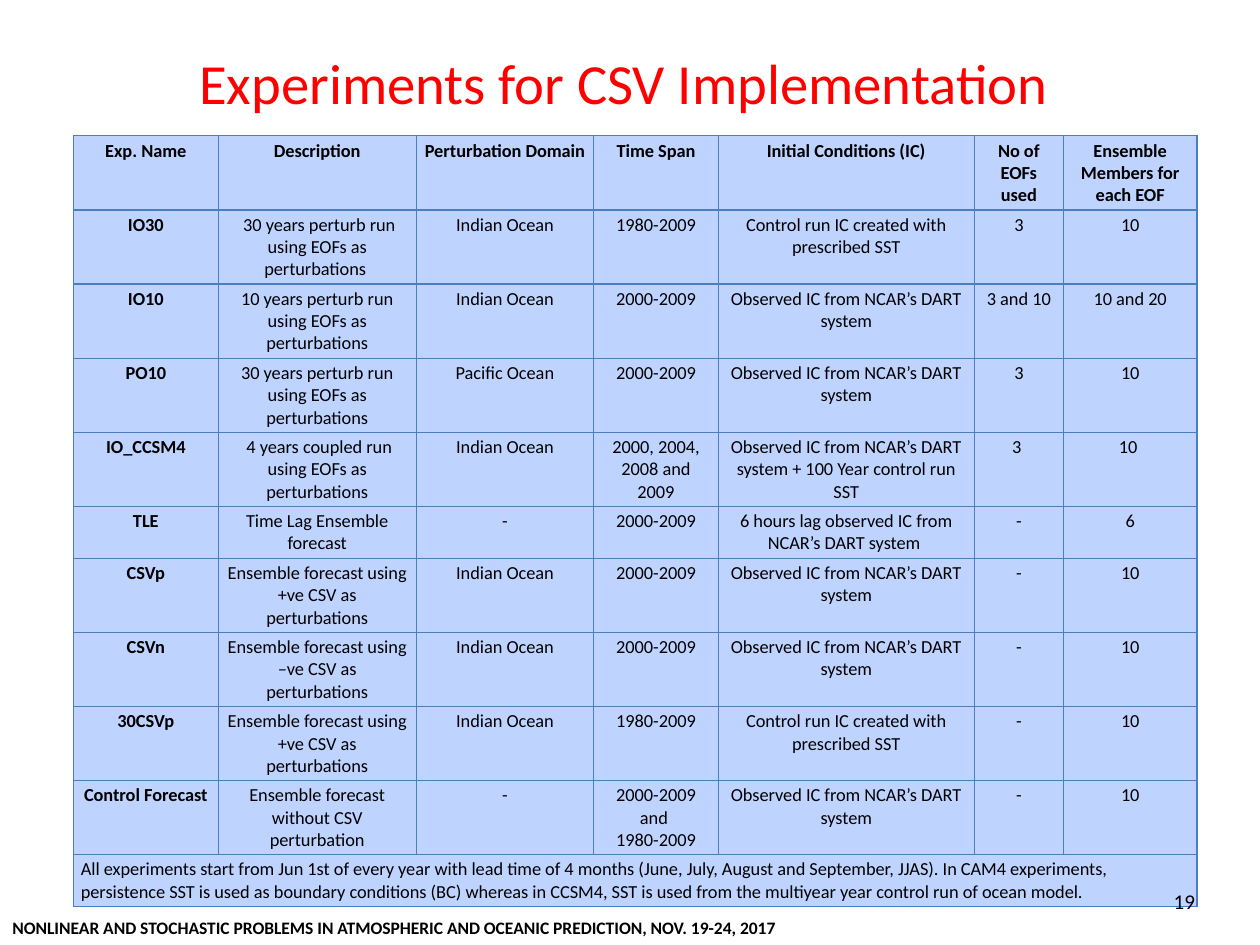
"""Build the slide that lists the experiments for CSV implementation."""
import lxml.etree
import pptx
import pptx.dml.color
import pptx.enum.text
import pptx.oxml.ns
import pptx.util

Cm = pptx.util.Cm
Pt = pptx.util.Pt
RGBColor = pptx.dml.color.RGBColor
ALIGN = pptx.enum.text.PP_ALIGN
ANCHOR = pptx.enum.text.MSO_ANCHOR
qn = pptx.oxml.ns.qn

BLACK = RGBColor(0x00, 0x00, 0x00)
RED = RGBColor(0xFF, 0x00, 0x00)
CELL_BLUE = RGBColor(0xBF, 0xD3, 0xFF)
BORDER_BLUE = RGBColor(0x4B, 0x7E, 0xBC)

COLUMN_WIDTHS = [2.92, 3.99, 3.58, 2.51, 5.16, 1.8, 2.69]
THREE_LINES, TWO_LINES = 1.49, 1.04
ROW_HEIGHTS = [THREE_LINES] * 5 + [TWO_LINES] + [THREE_LINES] * 4 + [TWO_LINES]

OBSERVED = "Observed IC from NCAR’s DART system"
CONTROL = "Control run IC created with prescribed SST"
HEADER = ["Exp. Name", "Description", "Perturbation Domain", "Time Span",
          "Initial Conditions (IC)", "No of EOFs used", "Ensemble Members for each EOF"]
EXPERIMENTS = [
    ["IO30", " 30 years perturb run using EOFs as perturbations ", "Indian Ocean",
     "1980-2009", CONTROL, "3", "10"],
    ["IO10", "10 years perturb run using EOFs as perturbations", "Indian Ocean",
     "2000-2009", OBSERVED, "3 and 10", "10 and 20"],
    ["PO10", "30 years perturb run using EOFs as perturbations", "Pacific Ocean",
     "2000-2009", OBSERVED, "3", "10"],
    ["IO_CCSM4", " 4 years coupled run using EOFs as perturbations", "Indian Ocean",
     "2000, 2004, 2008 and\n2009", OBSERVED + " + 100 Year control run SST", "3 ", "10 "],
    ["TLE", "Time Lag Ensemble forecast", "-",
     "2000-2009", "6 hours lag observed IC from NCAR’s DART system ", "-", "6"],
    ["CSVp", "Ensemble forecast using +ve CSV as perturbations", "Indian Ocean",
     "2000-2009", OBSERVED, "-", "10"],
    ["CSVn", "Ensemble forecast using –ve CSV as perturbations", "Indian Ocean",
     "2000-2009", OBSERVED, "-", "10"],
    ["30CSVp", "Ensemble forecast using +ve CSV as perturbations", "Indian Ocean",
     "1980-2009", CONTROL, "-", "10"],
    ["Control Forecast", "Ensemble forecast without CSV perturbation", "-",
     "2000-2009 and \n1980-2009", OBSERVED, "-", "10"],
]
NOTE = ("All experiments start from Jun 1st of every year with lead time of 4 months "
        "(June, July, August and September, JJAS). In CAM4 experiments, persistence SST "
        "is used as boundary conditions (BC) whereas in CCSM4, SST is used from the "
        "multiyear year control run of ocean model.")


def write(text_frame, text, size, color, alignment, bold=False):
    text_frame.text = text
    text_frame.word_wrap = True
    for paragraph in text_frame.paragraphs:
        paragraph.alignment = alignment
        paragraph.font.name = "Calibri"
        paragraph.font.size = Pt(size)
        paragraph.font.bold = bold
        paragraph.font.color.rgb = color


def style_cell(cell):
    cell.margin_left = cell.margin_right = Cm(0.15)
    cell.margin_top = cell.margin_bottom = Cm(0.08)
    properties = cell._tc.get_or_add_tcPr()
    for side in ("a:lnL", "a:lnR", "a:lnT", "a:lnB"):
        line = lxml.etree.SubElement(properties, qn(side), w=str(Pt(0.75)))
        line_fill = lxml.etree.SubElement(line, qn("a:solidFill"))
        lxml.etree.SubElement(line_fill, qn("a:srgbClr"), val=str(BORDER_BLUE))
    cell.fill.solid()
    cell.fill.fore_color.rgb = CELL_BLUE


presentation = pptx.Presentation()
presentation.slide_width = Cm(25.4)
presentation.slide_height = Cm(19.05)
slide = presentation.slides.add_slide(presentation.slide_layouts[6])

footer = slide.shapes.add_textbox(Cm(0), Cm(18.36), Cm(25.4), Cm(0.69))
write(footer.text_frame,
      "NONLINEAR AND STOCHASTIC PROBLEMS IN ATMOSPHERIC AND OCEANIC PREDICTION, NOV. 19-24, 2017",
      10, BLACK, ALIGN.LEFT, bold=True)

title = slide.shapes.add_textbox(Cm(1.27), Cm(0.76), Cm(22.86), Cm(1.78))
title.text_frame.vertical_anchor = ANCHOR.MIDDLE
write(title.text_frame, "Experiments for CSV Implementation ", 32.4, RED, ALIGN.CENTER)

table = slide.shapes.add_table(len(ROW_HEIGHTS), len(COLUMN_WIDTHS), Cm(1.48), Cm(2.74),
                               Cm(sum(COLUMN_WIDTHS)), Cm(sum(ROW_HEIGHTS))).table
for column, width in zip(table.columns, COLUMN_WIDTHS):
    column.width = Cm(width)
for row, height in zip(table.rows, ROW_HEIGHTS):
    row.height = Cm(height)
for cell in table.iter_cells():
    style_cell(cell)

for row_index, texts in enumerate([HEADER] + EXPERIMENTS):
    for column_index, text in enumerate(texts):
        write(table.cell(row_index, column_index).text_frame, text, 10.5, BLACK,
              ALIGN.CENTER, bold=row_index == 0 or column_index == 0)

last_row = len(ROW_HEIGHTS) - 1
note_cell = table.cell(last_row, 0)
note_cell.merge(table.cell(last_row, len(COLUMN_WIDTHS) - 1))
write(note_cell.text_frame, NOTE, 10.5, BLACK, ALIGN.LEFT)

page_number = slide.shapes.add_textbox(Cm(18.42), Cm(17.65), Cm(5.92), Cm(1.02))
page_number.text_frame.vertical_anchor = ANCHOR.MIDDLE
write(page_number.text_frame, "19", 12, BLACK, ALIGN.RIGHT)

presentation.save("out.pptx")
